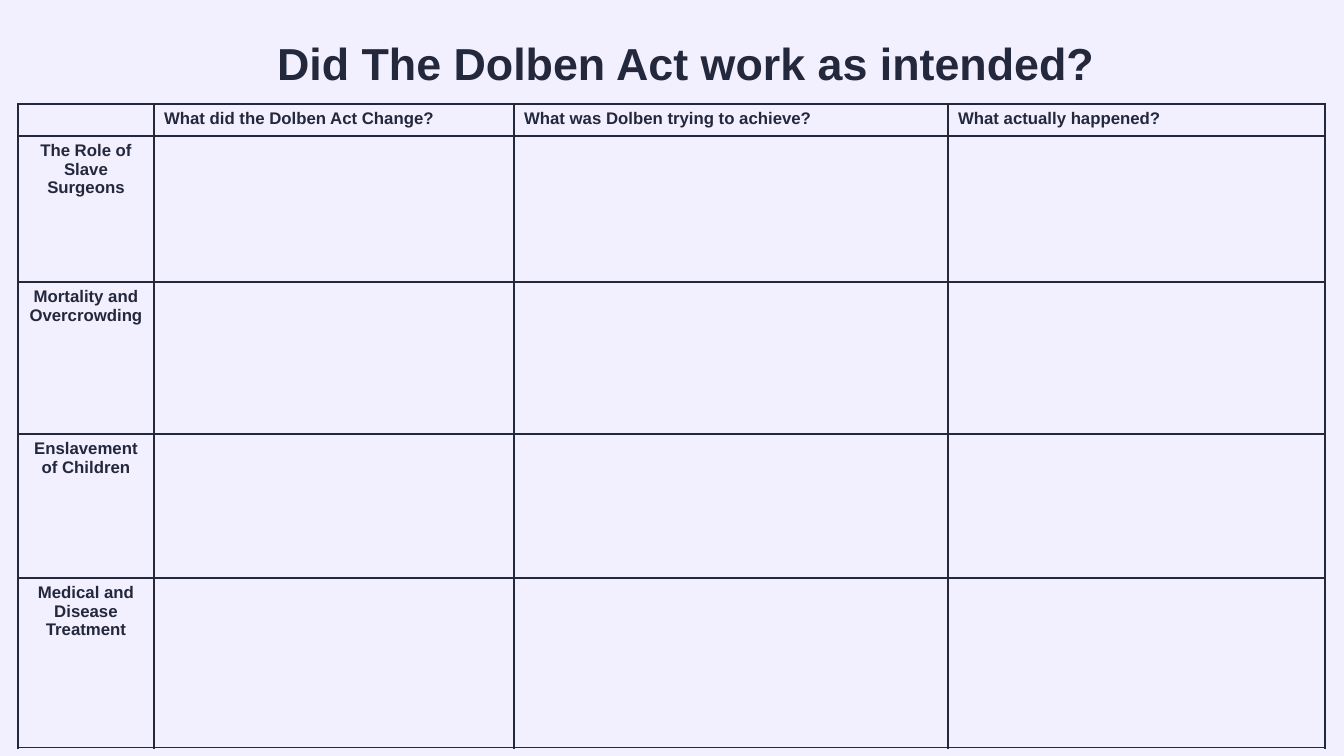
from lxml import etree
from pptx import Presentation
from pptx.dml.color import RGBColor
from pptx.enum.text import MSO_ANCHOR, PP_ALIGN
from pptx.oxml.ns import qn
from pptx.util import Pt

LEFT, CENTER = PP_ALIGN.LEFT, PP_ALIGN.CENTER
COLORS = {"ink": "24283C", "paper": "F2F0FF"}
FONT = "Arial"

TITLE = "Did The Dolben Act work as intended?"
QUESTIONS = [
    "What did the Dolben Act Change?",
    "What was Dolben trying to achieve?",
    "What actually happened?",
]
TOPICS = [
    "The Role of Slave Surgeons",
    "Mortality and Overcrowding",
    "Enslavement of Children",
    "Medical and Disease Treatment",
]

SLIDE_SIZE = (1344, 756)
TITLE_BOX = (267, 30, 844, 65)
TABLE_ORIGIN = (18, 104)
COLUMN_WIDTHS = [136, 360, 434, 377]
ROW_HEIGHTS = [32, 146, 152, 144, 170]


def px(value):
    return round(value * 914400 / 100.8)


def color(name):
    return RGBColor.from_string(COLORS[name])


def fill_solid(fill):
    fill.solid()
    fill.fore_color.rgb = color("paper")


def write(text_frame, text, size=12, align=LEFT):
    paragraph = text_frame.paragraphs[0]
    paragraph.alignment = align
    if not text:
        # An empty cell needs its own text size so that its row stays low.
        etree.SubElement(paragraph._p, qn("a:endParaRPr"), sz=str(size * 100))
        return
    run = paragraph.add_run()
    run.text = text
    run.font.name = FONT
    run.font.size = Pt(size)
    run.font.bold = True
    run.font.color.rgb = color("ink")


def add_borders(cell):
    """Draw all four cell edges; they must come before the cell fill."""
    properties = cell._tc.get_or_add_tcPr()
    for edge in ("a:lnL", "a:lnR", "a:lnT", "a:lnB"):
        line = etree.SubElement(properties, qn(edge), w=str(Pt(1)))
        solid = etree.SubElement(line, qn("a:solidFill"))
        etree.SubElement(solid, qn("a:srgbClr"), val=COLORS["ink"])


def add_title(slide):
    title = slide.shapes.title
    title.left, title.top, title.width, title.height = map(px, TITLE_BOX)
    fill_solid(title.fill)
    title.text_frame.word_wrap = False
    title.text_frame.vertical_anchor = MSO_ANCHOR.MIDDLE
    write(title.text_frame, TITLE, size=32)


def add_worksheet(slide):
    rows = [["", *QUESTIONS]]
    rows += [[topic] + [""] * len(QUESTIONS) for topic in TOPICS]
    left, top = TABLE_ORIGIN
    table = slide.shapes.add_table(
        len(rows), len(rows[0]), px(left), px(top),
        px(sum(COLUMN_WIDTHS)), px(sum(ROW_HEIGHTS)),
    ).table
    for column, width in zip(table.columns, COLUMN_WIDTHS):
        column.width = px(width)
    for row, height in zip(table.rows, ROW_HEIGHTS):
        row.height = px(height)
    for row_index, texts in enumerate(rows):
        for column_index, text in enumerate(texts):
            cell = table.cell(row_index, column_index)
            add_borders(cell)
            fill_solid(cell.fill)
            write(cell.text_frame, text, align=LEFT if column_index else CENTER)


def main():
    presentation = Presentation()
    presentation.slide_width, presentation.slide_height = map(px, SLIDE_SIZE)
    slide = presentation.slides.add_slide(presentation.slide_layouts[5])
    fill_solid(slide.background.fill)
    add_title(slide)
    add_worksheet(slide)
    presentation.save("out.pptx")


if __name__ == "__main__":
    main()
